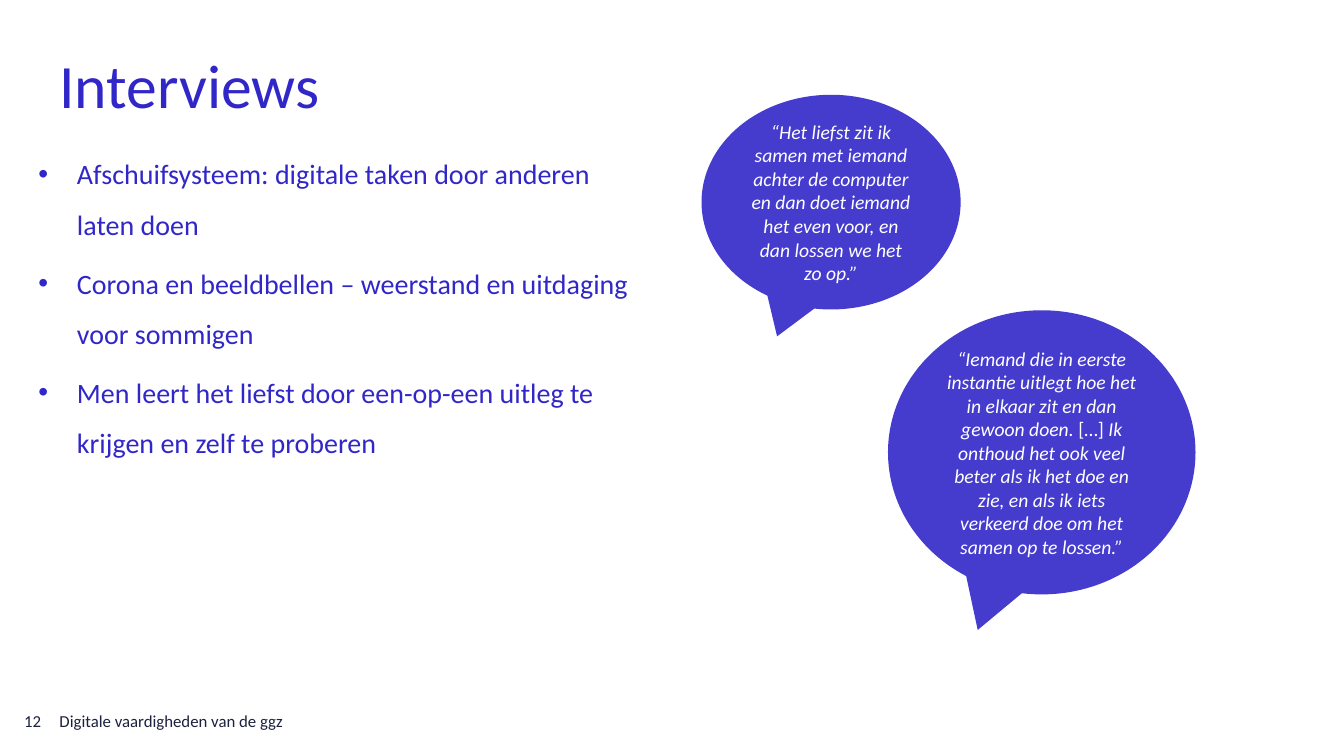
from lxml.etree import SubElement
from pptx import Presentation
from pptx.dml.color import RGBColor
from pptx.enum.shapes import MSO_SHAPE as SHAPE
from pptx.enum.text import MSO_ANCHOR as ANCHOR, PP_ALIGN as ALIGN
from pptx.oxml.ns import qn
from pptx.util import Cm, Pt

FONT = "Calibri"
INDIGO, NAVY, WHITE = "3127C8", "1B213E", "FFFFFF"


def color(hex_code):
    return RGBColor.from_string(hex_code)


def add_run(p, text, size=20, c=INDIGO, italic=False):
    r = p.add_run()
    r.text = text
    r.font.name, r.font.size = FONT, Pt(size)
    r.font.color.rgb = color(c)
    r.font.italic = italic


def add_box(s, box, anchor=ANCHOR.MIDDLE):
    tf = s.shapes.add_textbox(*map(Cm, box)).text_frame
    tf.word_wrap = True
    tf.margin_left = tf.margin_top = tf.margin_right = tf.margin_bottom = 0
    tf.vertical_anchor = anchor
    return tf


def add_line(s, box, text, **fmt):
    add_run(add_box(s, box).paragraphs[0], text, **fmt)


def add_bullets(s, box, items, indent=0.97):
    tf = add_box(s, box, ANCHOR.TOP)
    for i, item in enumerate(items):
        p = tf.add_paragraph() if i else tf.paragraphs[0]
        p.line_spacing, p.space_after = Pt(36), Pt(6)
        pPr = p._p.get_or_add_pPr()
        pPr.set("marL", str(Cm(indent)))
        pPr.set("indent", str(-Cm(indent)))
        SubElement(pPr, qn("a:buFont"), typeface="Arial")
        SubElement(pPr, qn("a:buChar"), char="•")
        add_run(p, item)


def add_quote(s, box, parts):
    """Speech bubble; parts are (text, italic) pairs."""
    sp = s.shapes.add_shape(SHAPE.OVAL_CALLOUT, *map(Cm, box))
    sp.shadow.inherit = False
    sp.line.fill.background()
    sp.fill.solid()
    sp.fill.fore_color.rgb = color(INDIGO)
    # Slightly transparent fill
    fill_color = sp._element.spPr.find(qn("a:solidFill"))[0]
    SubElement(fill_color, qn("a:alpha"), val="90000")
    tf = sp.text_frame
    tf.word_wrap = True
    tf.vertical_anchor = ANCHOR.MIDDLE
    p = tf.paragraphs[0]
    p.alignment = ALIGN.CENTER
    for text, italic in parts:
        add_run(p, text, size=14, c=WHITE, italic=italic)


def add_footer(s, left, top, number, text):
    add_line(s, (left, top, 0.71, 1.02), number, size=12, c=NAVY)
    add_line(s, (left + 0.89, top, 10.72, 1.02), text, size=12, c=NAVY)


def main():
    prs = Presentation()
    prs.slide_width, prs.slide_height = Cm(33.87), Cm(19.05)
    s = prs.slides.add_slide(prs.slide_layouts[6])

    # Title and findings
    add_line(s, (1.5, 0.53, 30.86, 3.18), "Interviews", size=44)
    add_bullets(s, (0.97, 3.53, 14.91, 5.44), [
        "Afschuifsysteem: digitale taken door anderen laten doen",
        "Corona en beeldbellen – weerstand en uitdaging voor sommigen",
        "Men leert het liefst door een-op-een uitleg te krijgen en zelf te proberen",
    ])

    # Quotes
    add_quote(s, (17.68, 2.39, 6.53, 5.41), [
        ("“Het liefst zit ik samen met iemand achter de computer en dan doet "
         "iemand het even voor, en dan lossen we het zo op.”", True),
    ])
    add_quote(s, (22.38, 7.82, 7.75, 7.16), [
        ("“Iemand die in eerste instantie uitlegt hoe het in elkaar zit en dan "
         "gewoon doen.", True),
        (" […] ", False),
        ("Ik onthoud het ook veel beter als ik het doe en zie, en als ik iets "
         "verkeerd doe om het samen op te lossen.”", True),
    ])

    # Footer
    add_footer(s, 0.61, 17.65, "12", "Digitale vaardigheden van de ggz")
    prs.save("out.pptx")


if __name__ == "__main__":
    main()
